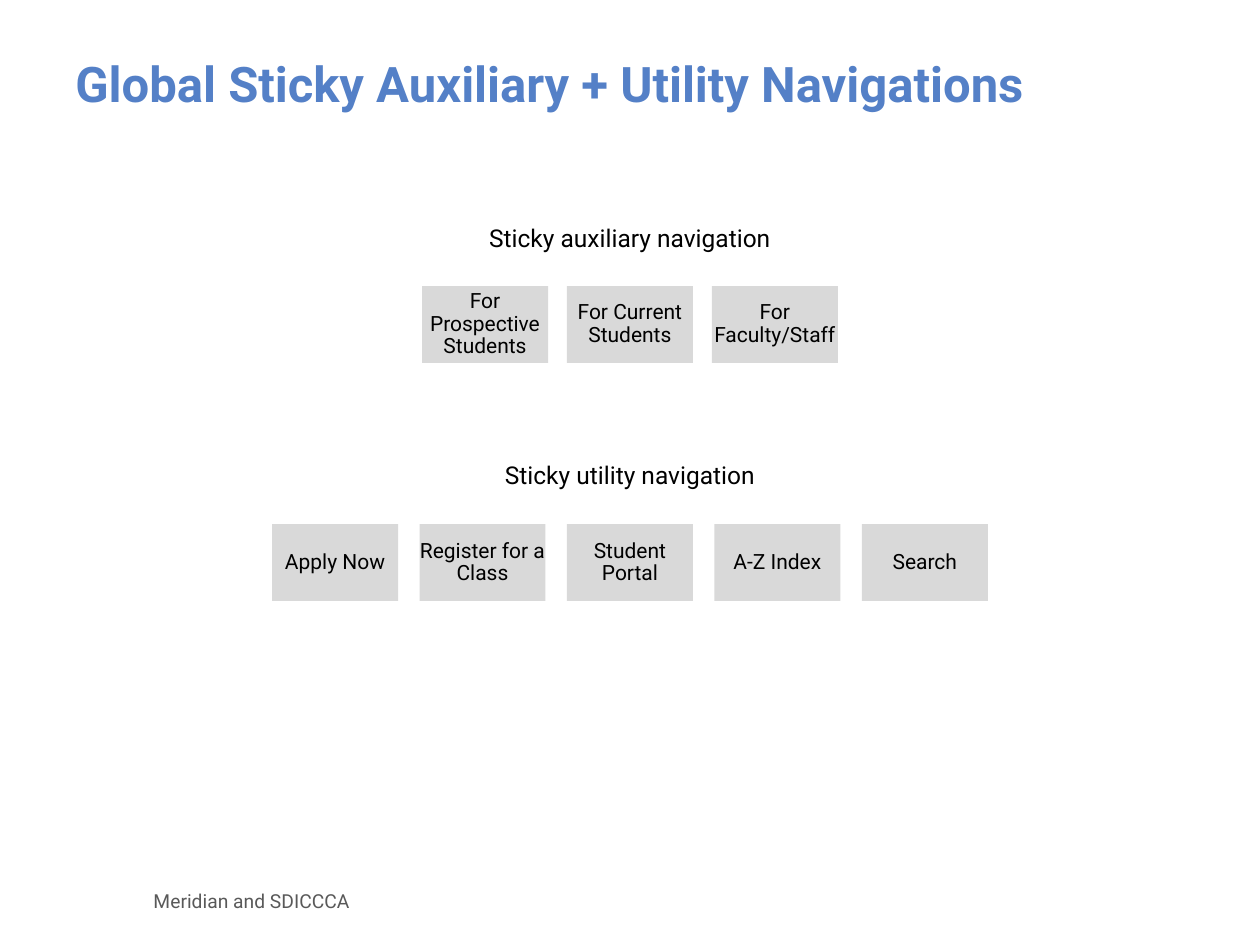
"""Build the sticky auxiliary and utility navigation slide."""
from pptx import Presentation
from pptx.dml.color import RGBColor
from pptx.enum.shapes import MSO_SHAPE
from pptx.enum.text import MSO_ANCHOR, PP_ALIGN
from pptx.util import Inches, Pt


def rgb(color):
    return RGBColor.from_string(color)


def write(sp, text, size=12, color="000000", bold=False, align=PP_ALIGN.LEFT,
          anchor=MSO_ANCHOR.MIDDLE, spacing=1.0, inset=None):
    tf = sp.text_frame
    tf.word_wrap = True
    tf.vertical_anchor = anchor
    if inset is not None:
        tf.margin_left = tf.margin_right = Inches(inset)
        tf.margin_top = tf.margin_bottom = Inches(inset)
    p = tf.paragraphs[0]
    p.alignment = align
    p.line_spacing = spacing
    r = p.add_run()
    r.text = text
    r.font.name = "Roboto"
    r.font.size = Pt(size)
    r.font.bold = bold
    r.font.color.rgb = rgb(color)


prs = Presentation()
prs.slide_width = Inches(10)
prs.slide_height = Inches(7.5)
s = prs.slides.add_slide(prs.slide_layouts[6])

title = s.shapes.add_textbox(Inches(0.5), Inches(0.3), Inches(9), Inches(0.71))
write(title, "Global Sticky Auxiliary + Utility Navigations",
      size=28, color="5480C7", bold=True)

navigations = [
    ("Sticky auxiliary navigation", 1.72, 2.27, 3.35, 1.15,
     ["For Prospective Students", "For Current Students", "For Faculty/Staff"]),
    ("Sticky utility navigation", 3.6, 4.16, 2.16, 1.17,
     ["Apply Now", "Register for a Class", "Student Portal", "A-Z Index", "Search"]),
]

for heading, heading_top, top, left, pitch, items in navigations:
    tb = s.shapes.add_textbox(Inches(0), Inches(heading_top), Inches(10), Inches(0.34))
    write(tb, heading, size=14, align=PP_ALIGN.CENTER, anchor=MSO_ANCHOR.TOP)
    for i, item in enumerate(items):
        sp = s.shapes.add_shape(MSO_SHAPE.RECTANGLE, Inches(left + i * pitch),
                                Inches(top), Inches(1), Inches(0.61))
        sp.shadow.inherit = False
        sp.fill.solid()
        sp.fill.fore_color.rgb = rgb("D9D9D9")
        sp.line.fill.background()
        write(sp, item, align=PP_ALIGN.CENTER, spacing=0.9, inset=0)

footer = s.shapes.add_textbox(Inches(1.12), Inches(6.95), Inches(4.9), Inches(0.4))
write(footer, "Meridian and SDICCCA", size=11, color="595959")

prs.save("out.pptx")
